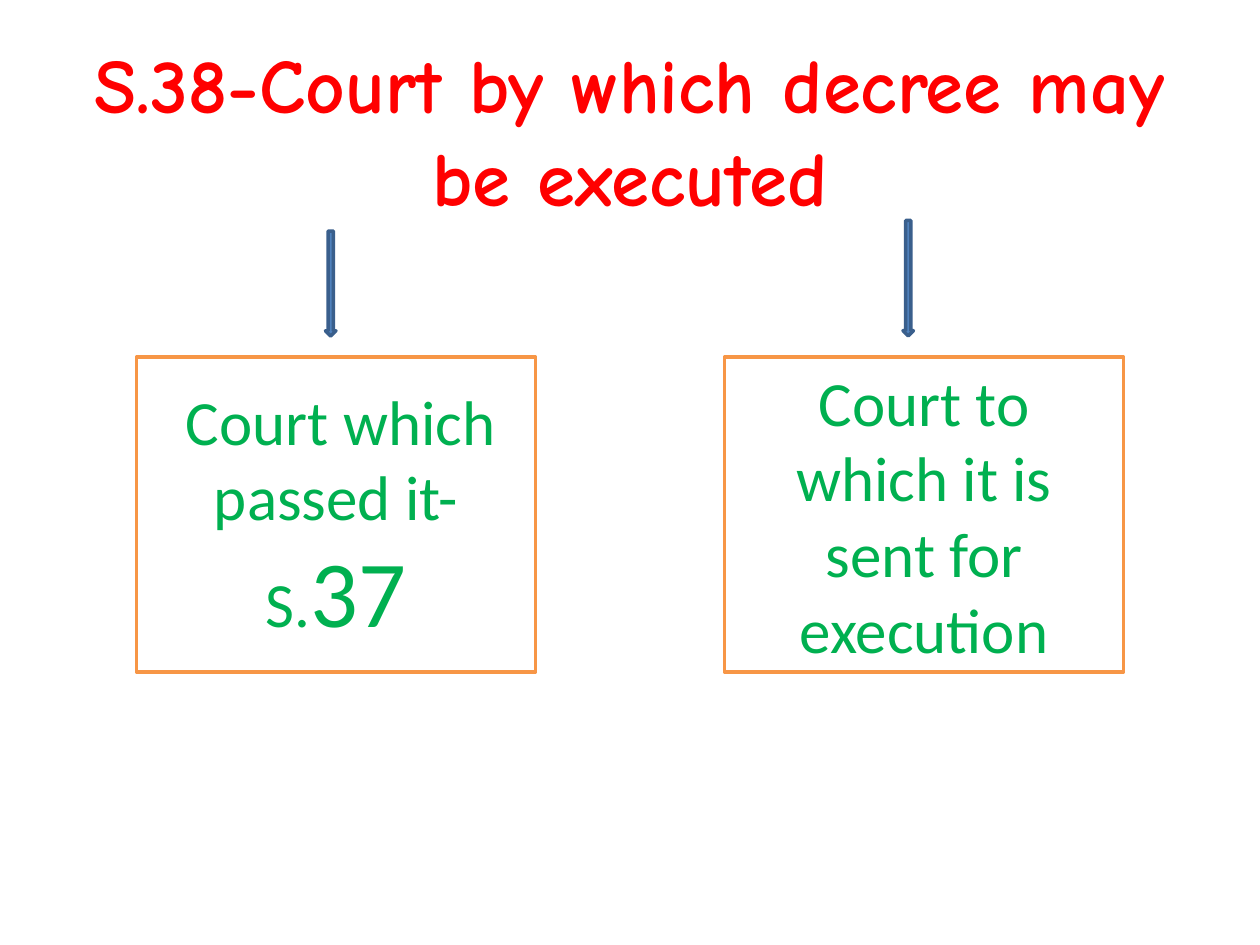
from pptx import Presentation
from pptx.dml.color import RGBColor
from pptx.enum.shapes import MSO_SHAPE
from pptx.enum.text import MSO_ANCHOR, PP_ALIGN
from pptx.util import Inches, Pt

COLORS = {
    "title": "FF0000",
    "text": "00B050",
    "box": "FFFFFF",
    "box_line": "F79646",
    "arrow": "4F81BD",
    "arrow_line": "3A5F8C",
}

deck = Presentation()
deck.slide_width, deck.slide_height = Inches(10), Inches(7.5)
page = deck.slides.add_slide(deck.slide_layouts[6])

# Grid of 120 columns by 90 rows
COLUMN = deck.slide_width / 120
ROW = deck.slide_height / 90


def place(column, row, columns, rows):
    return (round(column * COLUMN), round(row * ROW),
            round(columns * COLUMN), round(rows * ROW))


def write(box, spans, font, color, bold=False):
    frame = box.text_frame
    frame.word_wrap = True
    frame.vertical_anchor = MSO_ANCHOR.MIDDLE
    para = frame.paragraphs[0]
    para.alignment = PP_ALIGN.CENTER
    for text, size in spans:
        span = para.add_run()
        span.text = text
        span.font.color.rgb = RGBColor.from_string(COLORS[color])
        values = {"name": font, "size": Pt(size), "bold": bold}
        for name, value in values.items():
            setattr(span.font, name, value)


# Title
title = page.shapes.add_textbox(*place(6, 3.6, 108, 17.4))
write(title, [("S.38-Court by which decree may be executed", 44)],
      "Comic Neue", "title", bold=True)

# Arrows down to the two courts, then the courts themselves
parts = [
    (MSO_SHAPE.DOWN_ARROW, "arrow", (31, 22, 1, 10), []),
    (MSO_SHAPE.DOWN_ARROW, "arrow", (86, 21, 1, 11), []),
    (MSO_SHAPE.RECTANGLE, "box", (13, 34, 38, 30),
     [(" ", 24), ("Court which passed it- S.", 36), ("37", 54)]),
    (MSO_SHAPE.RECTANGLE, "box", (69, 34, 38, 30),
     [("Court to which it is sent for execution", 36)]),
]
for kind, color, cells, spans in parts:
    shape = page.shapes.add_shape(kind, *place(*cells))
    shape.shadow.inherit = False
    shape.fill.solid()
    shape.fill.fore_color.rgb = RGBColor.from_string(COLORS[color])
    shape.line.color.rgb = RGBColor.from_string(COLORS[color + "_line"])
    shape.line.width = Pt(2)
    if spans:
        write(shape, spans, "Calibri", "text")

deck.save("out.pptx")
